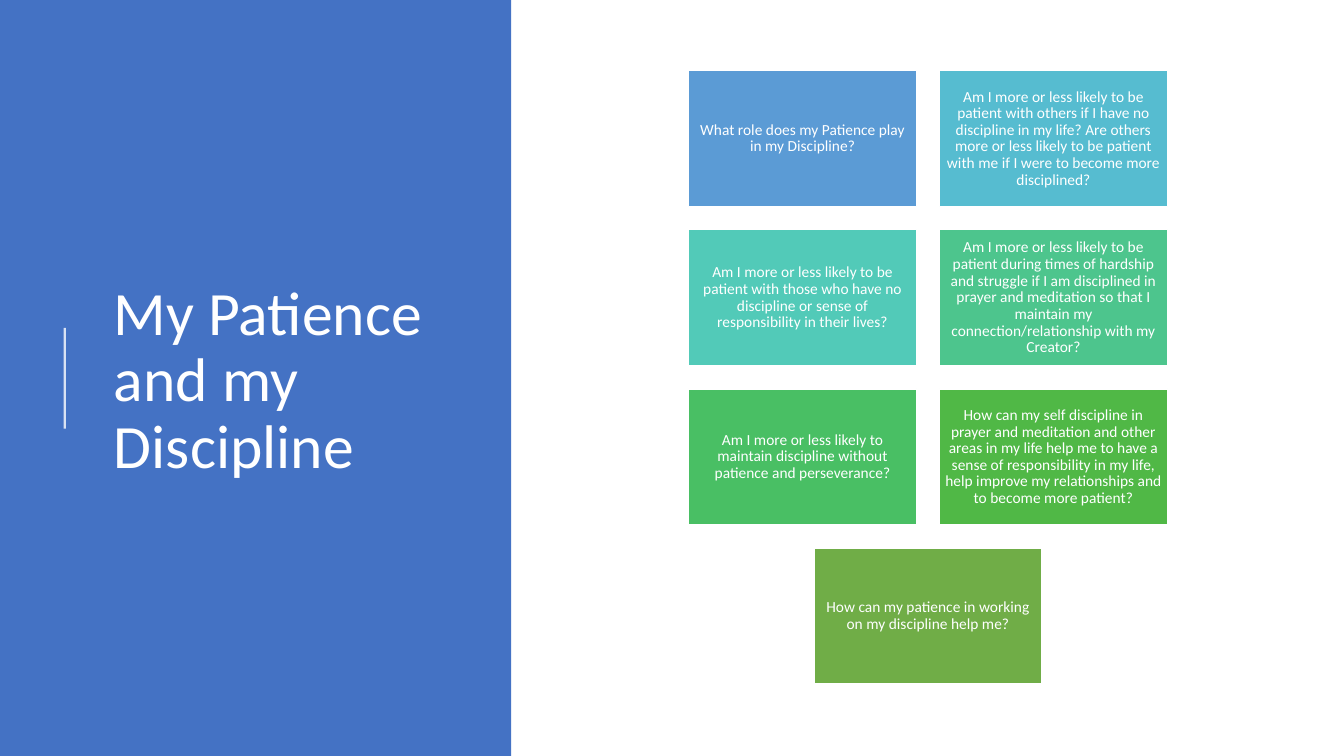
"""Build the slide "My Patience and my Discipline" with seven question cards."""
from lxml import etree
from pptx import Presentation
from pptx import util as u
from pptx.dml.color import RGBColor
from pptx.enum import shapes, text
from pptx.oxml.ns import qn

WHITE = RGBColor(0xFF, 0xFF, 0xFF)
PANEL_BLUE = RGBColor(0x44, 0x72, 0xC4)
QUESTIONS = [
    ("What role does my Patience play in my Discipline?", RGBColor(0x5B, 0x9B, 0xD5)),
    ("Am I more or less likely to be patient with others if I have no discipline in my life? "
     "Are others more or less likely to be patient with me if I were to become more disciplined?",
     RGBColor(0x56, 0xBC, 0xD0)),
    ("Am I more or less likely to be patient with those who have no discipline or sense of "
     "responsibility in their lives?", RGBColor(0x52, 0xCA, 0xB8)),
    ("Am I more or less likely to be patient during times of hardship and struggle if I am "
     "disciplined in prayer and meditation so that I maintain my connection/relationship "
     "with my Creator?", RGBColor(0x4D, 0xC5, 0x8D)),
    ("Am I more or less likely to maintain discipline without patience and perseverance?",
     RGBColor(0x49, 0xBF, 0x64)),
    ("How can my self discipline in prayer and meditation and other areas in my life help me "
     "to have a sense of responsibility in my life, help improve my relationships and to "
     "become more patient?", RGBColor(0x50, 0xB8, 0x46)),
    ("How can my patience in working on my discipline help me?", RGBColor(0x70, 0xAD, 0x47)),
]
COLUMNS = 2
CARD_WIDTH, CARD_HEIGHT = 5.74, 3.43
COLUMN_STEP, ROW_STEP = 6.32, 4.01
GRID_LEFT, GRID_TOP = 17.35, 1.78


def write(frame, words, size, align, inset_x, inset_y):
    frame.word_wrap = True
    frame.auto_size = text.MSO_AUTO_SIZE.NONE
    frame.vertical_anchor = text.MSO_ANCHOR.MIDDLE
    frame.margin_left = frame.margin_right = u.Cm(inset_x)
    frame.margin_top = frame.margin_bottom = u.Cm(inset_y)
    frame.text = words
    paragraph = frame.paragraphs[0]
    paragraph.alignment = align
    paragraph.line_spacing = 0.9
    paragraph.font.name = "Calibri"
    paragraph.font.size = u.Pt(size)
    paragraph.font.color.rgb = WHITE


deck = Presentation()
deck.slide_width, deck.slide_height = u.Inches(13.33), u.Inches(7.5)
slide = deck.slides.add_slide(deck.slide_layouts[5])

panel = slide.shapes.add_shape(
    shapes.MSO_SHAPE.RECTANGLE, 0, 0, u.Cm(12.88), deck.slide_height)
panel.shadow.inherit = False
panel.fill.solid()
panel.fill.fore_color.rgb = PANEL_BLUE
panel.line.fill.background()

heading = slide.shapes.title
heading.left, heading.top = u.Cm(2.62), u.Cm(1.98)
heading.width, heading.height = u.Cm(9.37), u.Cm(15.29)
write(heading.text_frame, "My Patience and my Discipline", size=44,
      align=text.PP_ALIGN.LEFT, inset_x=0.25, inset_y=0.13)
panel.element.addnext(heading.element)

accent = slide.shapes.add_connector(
    shapes.MSO_CONNECTOR.STRAIGHT, u.Cm(1.63), u.Cm(10.8), u.Cm(1.63), u.Cm(8.26))
accent.line.width = u.Pt(1.5)
accent.line.color.rgb = WHITE
accent_color = next(accent.element.spPr.iter(qn("a:srgbClr")))
etree.SubElement(accent_color, qn("a:alpha"), val="80000")
etree.SubElement(accent.element.spPr, qn("a:effectLst"))

for index, (question, color) in enumerate(QUESTIONS):
    row, column = divmod(index, COLUMNS)
    cards_in_row = min(COLUMNS, len(QUESTIONS) - row * COLUMNS)
    column += (COLUMNS - cards_in_row) / 2
    card = slide.shapes.add_shape(
        shapes.MSO_SHAPE.RECTANGLE,
        u.Cm(GRID_LEFT + column * COLUMN_STEP), u.Cm(GRID_TOP + row * ROW_STEP),
        u.Cm(CARD_WIDTH), u.Cm(CARD_HEIGHT))
    card.shadow.inherit = False
    card.fill.solid()
    card.fill.fore_color.rgb = color
    card.line.color.rgb = WHITE
    card.line.width = u.Pt(1)
    write(card.text_frame, question, size=11,
          align=text.PP_ALIGN.CENTER, inset_x=0.12, inset_y=0.12)

deck.save("out.pptx")
